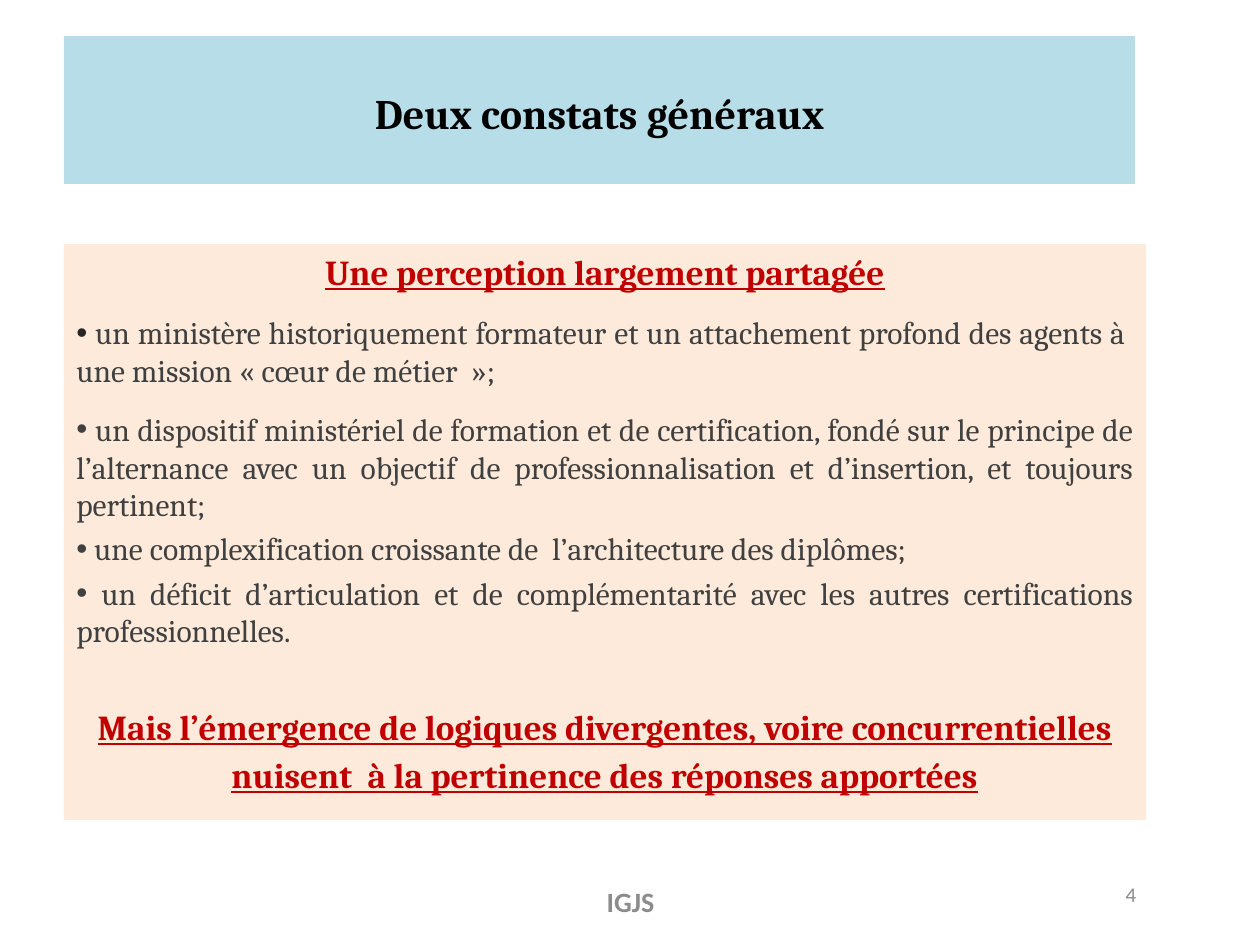
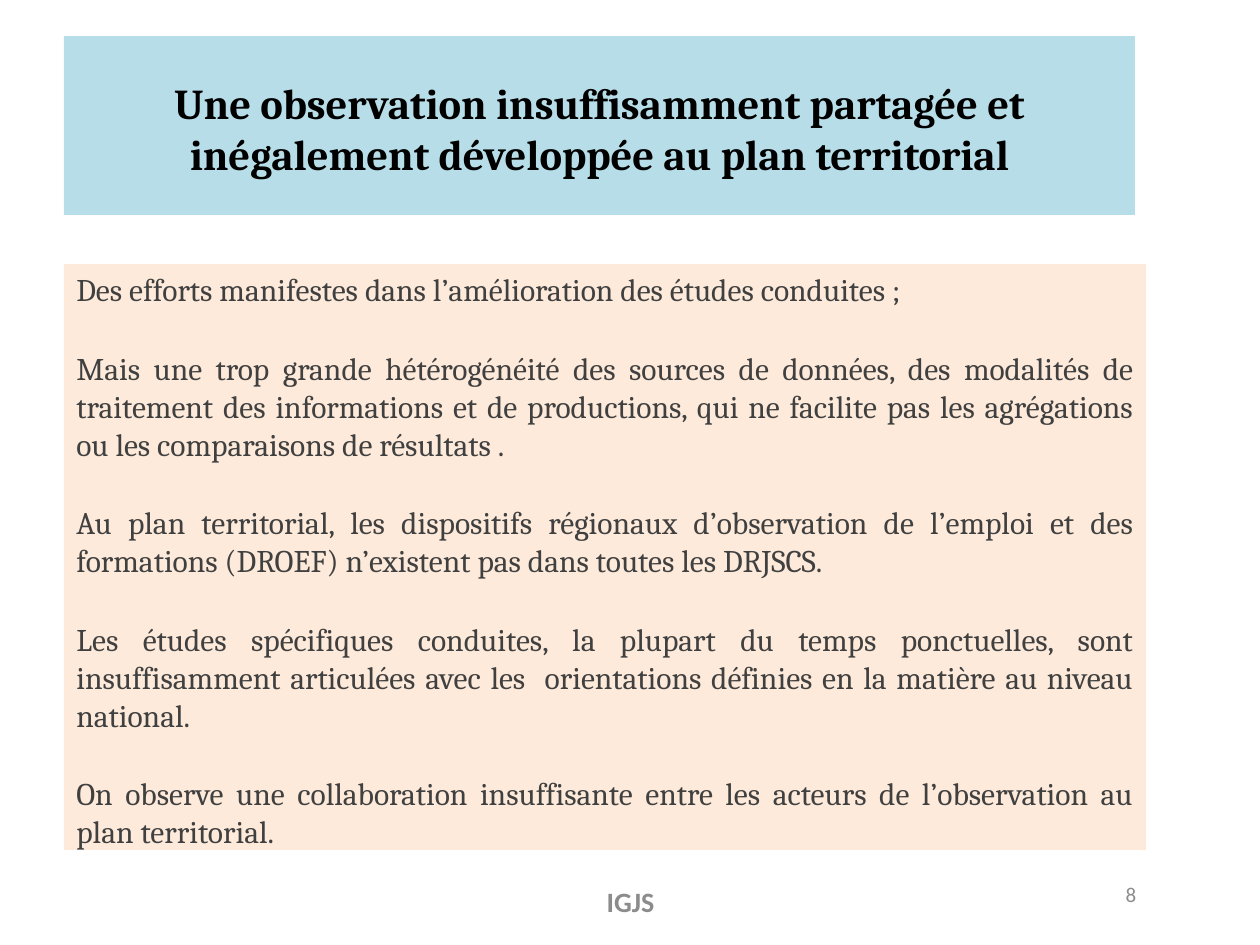
from pptx import Presentation
from pptx.util import Emu, Pt
from pptx.dml.color import RGBColor
from pptx.enum.text import MSO_ANCHOR, MSO_AUTO_SIZE, PP_ALIGN
from lxml.etree import SubElement
from pptx.oxml.ns import qn

HUES = {"band": "B7DEE8", "panel": "FDEADA", "title": "000000",
        "key": "C00000", "text": "404040", "foot": "8C8C8C", "dot": "262626"}

STYLES = {
    "key": dict(size=20, hue="key", bold=True, line=True, align=PP_ALIGN.CENTER),
    "item": dict(size=18, hue="text", align=PP_ALIGN.JUSTIFY, dot="text"),
    "first": dict(size=18, hue="text", align=PP_ALIGN.JUSTIFY, dot="dot"),
    "plain": dict(size=18, hue="text", align=PP_ALIGN.JUSTIFY),
}

TIGHT, WIDE, BREAK, GAP = 3.6, 12, 32, 23.4

SLIDES = [
    dict(title="Deux constats généraux", size=24, band=(36, 148),
         panel=(244, 576), page="4", body=[
        ("key", WIDE, "Une perception largement partagée"),
        ("first", WIDE, " un ministère historiquement formateur et un attachement profond des agents à  une mission «\u00a0cœur de métier\u00a0\u00a0»;"),
        ("item", WIDE, " un dispositif ministériel de formation et de certification, fondé sur le principe de l’alternance avec un objectif de professionnalisation et d’insertion, et toujours pertinent;"),
        ("item", TIGHT, " une complexification croissante de  l’architecture des diplômes;"),
        ("item", TIGHT, " un déficit d’articulation et de complémentarité avec les autres certifications professionnelles."),
        ("key", BREAK, "Mais l’émergence de logiques divergentes, voire concurrentielles"),
        ("key", TIGHT, "nuisent  à la pertinence des réponses apportées"),
    ]),
    dict(title="Une observation insuffisamment partagée et inégalement développée au plan territorial",
         size=24.3, band=(36, 179), panel=(264, 586), page="8", body=[
        ("plain", TIGHT, "Des efforts manifestes dans l’amélioration des études conduites ;"),
        ("plain", GAP, "Mais une trop grande hétérogénéité des sources de données, des modalités de traitement des informations et de productions, qui ne facilite pas les agrégations ou les comparaisons de résultats ."),
        ("plain", GAP, "Au plan territorial, les dispositifs régionaux d’observation de l’emploi et des formations (DROEF) n’existent pas dans toutes les DRJSCS."),
        ("plain", GAP, "Les études spécifiques conduites, la plupart du temps ponctuelles, sont insuffisamment articulées avec les  orientations définies en la matière au niveau national."),
        ("plain", GAP, "On observe une collaboration insuffisante entre les acteurs de l’observation au plan territorial."),
    ]),
]

LEFT, BAND, PANEL = 64, 1071, 1082
FOOT, PAGE = (431, 876, 399, 50), (1047, 869, 168, 50)


def px(n):
    return Emu(int(n * 914400 / 126))


def place(shape, left, top, width, height):
    shape.left, shape.top = px(left), px(top)
    shape.width, shape.height = px(width), px(height)


def paint(shape, hue):
    shape.fill.solid()
    shape.fill.fore_color.rgb = RGBColor.from_string(HUES[hue])


def setup(shape, anchor):
    frame = shape.text_frame
    frame.word_wrap = True
    frame.auto_size = MSO_AUTO_SIZE.NONE
    frame.vertical_anchor = anchor
    return frame


def write(para, text, size, hue, bold=False, line=False,
          align=PP_ALIGN.CENTER, dot=None, face="Cambria", gap=0):
    para.text = text
    para.alignment = align
    para.space_before = Pt(gap)
    if dot:
        bullet(para, dot)
    for run in para.runs:
        font = run.font
        font.name, font.size = face, Pt(size)
        font.bold, font.underline = bold, line
        font.color.rgb = RGBColor.from_string(HUES[hue])


def bullet(para, hue):
    props = para._p.get_or_add_pPr()
    props.set("marL", "0")
    props.set("indent", "0")
    tint = SubElement(props, qn("a:buClr"))
    SubElement(tint, qn("a:srgbClr"), val=HUES[hue])
    SubElement(props, qn("a:buFont"), typeface="Arial")
    SubElement(props, qn("a:buChar"), char="•")


def label(slide, box, text, size, bold=False):
    shape = slide.shapes.add_textbox(*map(px, box))
    frame = setup(shape, MSO_ANCHOR.MIDDLE)
    write(frame.paragraphs[0], text, size, "foot", bold, face="Calibri")


def build(deck, data):
    slide = deck.slides.add_slide(deck.slide_layouts[5])
    title = slide.shapes.title
    top, height = data["band"]
    place(title, LEFT, top, BAND, height)
    paint(title, "band")
    frame = setup(title, MSO_ANCHOR.MIDDLE)
    frame.margin_top = px(12)
    write(frame.paragraphs[0], data["title"], data["size"], "title", True)

    top, height = data["panel"]
    panel = slide.shapes.add_textbox(*map(px, (LEFT, top, PANEL, height)))
    paint(panel, "panel")
    frame = setup(panel, MSO_ANCHOR.TOP)
    for i, (style, gap, text) in enumerate(data["body"]):
        para = frame.add_paragraph() if i else frame.paragraphs[0]
        write(para, text, gap=gap, **STYLES[style])

    label(slide, FOOT, "IGJS", 16, True)
    label(slide, PAGE, data["page"], 12)


def main():
    deck = Presentation()
    deck.slide_width, deck.slide_height = px(1260), px(945)
    for data in SLIDES:
        build(deck, data)
    deck.save("out.pptx")


if __name__ == "__main__":
    main()
